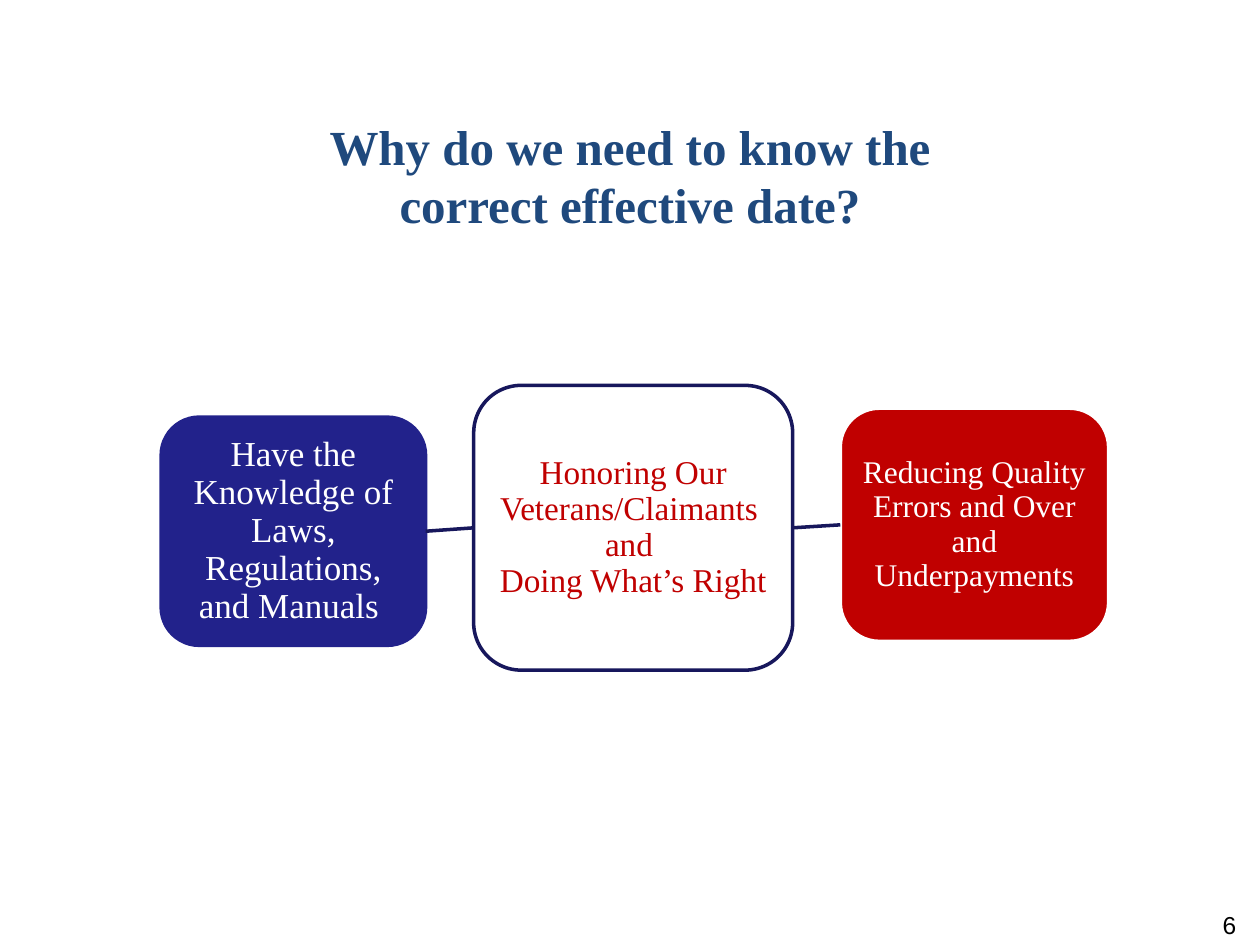
from pptx import Presentation
from pptx.dml.color import RGBColor
from pptx.enum.shapes import MSO_CONNECTOR, MSO_SHAPE
from pptx.enum.text import MSO_ANCHOR, PP_ALIGN
from pptx.oxml.ns import qn
from pptx.util import Cm, Pt
from lxml import etree

WHITE = RGBColor(0xFF, 0xFF, 0xFF)
BLACK = RGBColor(0x00, 0x00, 0x00)
TITLE_BLUE = RGBColor(0x1F, 0x49, 0x7D)
NAVY = RGBColor(0x17, 0x17, 0x5C)
INDIGO = RGBColor(0x22, 0x22, 0x8B)
RED = RGBColor(0xC0, 0x00, 0x00)

ROUNDED = MSO_SHAPE.ROUNDED_RECTANGLE
STRAIGHT = MSO_CONNECTOR.STRAIGHT
TOP, MIDDLE = MSO_ANCHOR.TOP, MSO_ANCHOR.MIDDLE
CENTER, RIGHT = PP_ALIGN.CENTER, PP_ALIGN.RIGHT
RIGHT_SIDE, LEFT_SIDE = 3, 1
SERIF, SANS = "Times New Roman", "Arial"
LINE_WIDTH = Pt(2)

# left, top, width, height within the region; text, size, fill, outline, text colour
REASONS = [
    ((0, 0.64, 5.33, 4.6), ["Have the Knowledge of Laws, Regulations, and Manuals "],
     20, INDIGO, INDIGO, WHITE),
    ((6.3, 0, 6.43, 5.74), ["Honoring Our Veterans/Claimants ", "and ", "Doing What’s Right"],
     19, WHITE, NAVY, RED),
    ((13.69, 0.46, 5.41, 4.7), ["Reducing Quality Errors and Over and Underpayments"],
     18, RED, WHITE, WHITE),
]


def write_lines(shape, lines, size, color, font=SERIF, bold=False, align=CENTER,
                anchor=MIDDLE, insets=(0.13, 0.13, 0.13, 0.13)):
    """Fill a shape with one paragraph; insets are left, top, right, bottom in cm."""
    frame = shape.text_frame
    frame.word_wrap = True
    frame.vertical_anchor = anchor
    (frame.margin_left, frame.margin_top,
     frame.margin_right, frame.margin_bottom) = map(Cm, insets)
    para = frame.paragraphs[0]
    para.alignment = align
    for index, line in enumerate(lines):
        if index:
            para.add_line_break()
        span = para.add_run()
        span.text = line
        span.font.name = font
        span.font.size = Pt(size)
        span.font.bold = bold
        span.font.color.rgb = color
    return para


def add_title(page, left, top, width, height):
    box = page.shapes.add_textbox(Cm(left), Cm(top), Cm(width), Cm(height))
    write_lines(box, ["Why do we need to know the", "correct effective date?"],
                28, TITLE_BLUE, bold=True, anchor=TOP)


def add_page_number(page, left, top, width, height):
    box = page.shapes.add_textbox(Cm(left), Cm(top), Cm(width), Cm(height))
    write_lines(box, ["6"], 14, BLACK, font=SANS, align=RIGHT, anchor=TOP,
                insets=(0.25, 0, 0.25, 0.13))


def add_reason(page, left, top, width, height, lines, size, fill, outline, color):
    card = page.shapes.add_shape(ROUNDED, Cm(left), Cm(top), Cm(width), Cm(height))
    card.shadow.inherit = False
    card.fill.solid()
    card.fill.fore_color.rgb = fill
    card.line.color.rgb = outline
    card.line.width = LINE_WIDTH
    write_lines(card, lines, size, color).line_spacing = 0.9
    return card


def join_cards(page, first, second):
    link = page.shapes.add_connector(STRAIGHT, 0, 0, 0, 0)
    link.begin_connect(first, RIGHT_SIDE)
    link.end_connect(second, LEFT_SIDE)
    link.line.color.rgb = NAVY
    link.line.width = LINE_WIDTH
    etree.SubElement(link.element.spPr, qn("a:effectLst"))


def add_reasons(page, left, top):
    cards = [add_reason(page, left + x, top + y, width, height, *content)
             for (x, y, width, height), *content in REASONS]
    for first, second in zip(cards, cards[1:]):
        join_cards(page, first, second)


def main():
    deck = Presentation()
    deck.slide_width, deck.slide_height = Cm(25.4), Cm(19.05)
    page = deck.slides.add_slide(deck.slide_layouts[6])
    add_title(page, 0, 2.21, 25.4, 3.02)
    add_reasons(page, 3.25, 7.77)
    add_page_number(page, 19.25, 18.34, 5.92, 1.02)
    deck.save("out.pptx")


if __name__ == "__main__":
    main()
